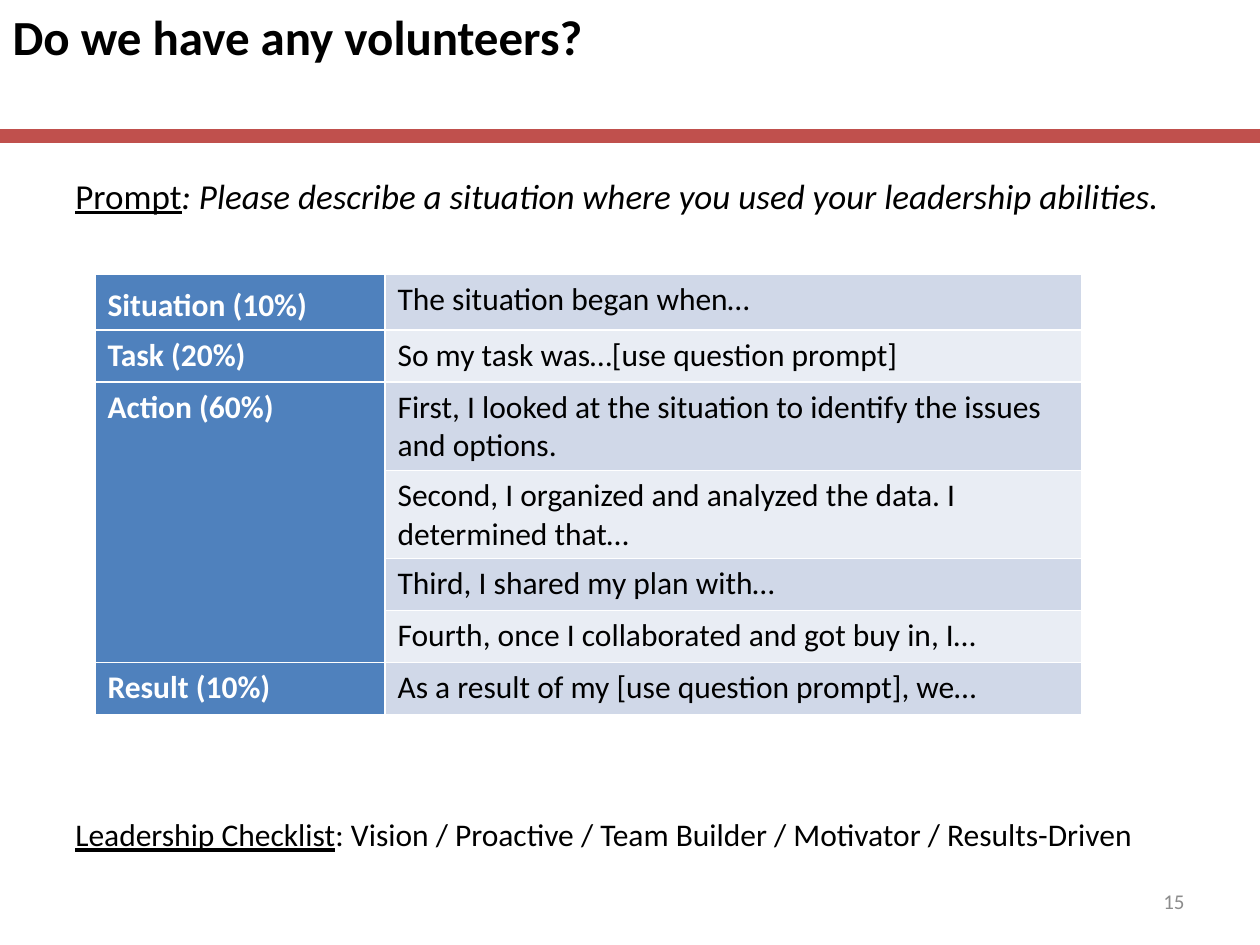
from typing import NamedTuple

from lxml import etree
from pptx import Presentation, util as u
from pptx.dml.color import RGBColor
from pptx.enum import shapes, text
from pptx.oxml import parse_xml
from pptx.oxml.ns import nsdecls, qn

SCALE = 914400 / 126
FONT = "Calibri"
HEX = {
    "black": "000000",
    "white": "FFFFFF",
    "grey": "8C8C8C",
    "rule": "C0504D",
    "head": "4F81BD",
    "odd": "D0D8E8",
    "even": "E9EDF4",
}


class Box(NamedTuple):
    left: int
    top: int
    width: int
    height: int


class Step(NamedTuple):
    name: str
    lines: list[str]


STEPS = [
    Step("Situation (10%)", ["The situation began when…"]),
    Step("Task (20%)", ["So my task was…[use question prompt]"]),
    Step("Action (60%)", [
        "First, I looked at the situation to identify the issues and options.",
        "Second, I organized and analyzed the data. I determined that…",
        "Third, I shared my plan with…",
        "Fourth, once I collaborated and got buy in, I…",
    ]),
    Step("Result (10%)", ["As a result of my [use question prompt], we…"]),
]


def px(n: int) -> u.Emu:
    return u.Emu(round(n * SCALE))


def tint(name: str) -> RGBColor:
    return RGBColor.from_string(HEX[name])


def write(para, words: str, *, size: int = 18, color: str = "black",
          bold: bool = False, italic: bool = False, under: bool = False):
    run = para.add_run()
    run.text = words
    font = run.font
    font.name, font.size = FONT, u.Pt(size)
    font.bold, font.italic, font.underline = bold, italic, under
    font.color.rgb = tint(color)


def label(slide, box: Box):
    frame = slide.shapes.add_textbox(*map(px, box)).text_frame
    frame.word_wrap = True
    return frame


def edge(cell):
    props = cell._tc.get_or_add_tcPr()
    for i, side in enumerate("LRTB"):
        props.insert(i, parse_xml(
            f'<a:ln{side} {nsdecls("a")} w="12700"><a:solidFill>'
            f'<a:srgbClr val="{HEX["white"]}"/></a:solidFill></a:ln{side}>'))


def paint(cell, color: str):
    cell.fill.solid()
    cell.fill.fore_color.rgb = tint(color)
    edge(cell)


def draw_title(slide, words: str, box: Box):
    title = slide.shapes.title
    title.left, title.top, title.width, title.height = map(px, box)
    frame = title.text_frame
    frame.auto_size = text.MSO_AUTO_SIZE.NONE
    frame.vertical_anchor = text.MSO_ANCHOR.TOP
    para = frame.paragraphs[0]
    para.alignment = text.PP_ALIGN.LEFT
    write(para, words, size=28, bold=True)


def draw_rule(slide, y: int, width: int):
    rule = slide.shapes.add_connector(
        shapes.MSO_CONNECTOR.STRAIGHT, 0, px(y), px(width), px(y))
    rule.line.color.rgb = tint("rule")
    rule.line.width = u.Pt(7.5)
    etree.SubElement(rule._element.spPr, qn("a:effectLst"))


def draw_steps(slide, steps: list[Step], box: Box, first: int):
    count = sum(len(step.lines) for step in steps)
    table = slide.shapes.add_table(count, 2, *map(px, box)).table
    table.first_row = table.horz_banding = False
    table.columns[0].width = px(first)
    table.columns[1].width = px(box.width - first)
    for row in table.rows:
        row.height = px(52)
    top = 0
    for step in steps:
        for i, line in enumerate(step.lines, top):
            paint(table.cell(i, 0), "head")
            paint(table.cell(i, 1), "even" if i % 2 else "odd")
            write(table.cell(i, 1).text_frame.paragraphs[0], line)
        head = table.cell(top, 0)
        if len(step.lines) > 1:
            head.merge(table.cell(i, 0))
        write(head.text_frame.paragraphs[0], step.name, color="white", bold=True)
        top = i + 1
    para = table.cell(0, 0).text_frame.paragraphs[0]
    para.line_spacing = 1.15
    para.space_before = para.space_after = u.Pt(2)


def main():
    deck = Presentation()
    deck.slide_width, deck.slide_height = px(1260), px(945)
    slide = deck.slides.add_slide(deck.slide_layouts[5])

    draw_rule(slide, 136, 1260)
    draw_title(slide, "Do we have any volunteers?", Box(0, 0, 1057, 126))

    page = label(slide, Box(903, 876, 294, 50))
    page.vertical_anchor = text.MSO_ANCHOR.MIDDLE
    page.paragraphs[0].alignment = text.PP_ALIGN.RIGHT
    write(page.paragraphs[0], "15", size=12, color="grey")

    check = label(slide, Box(63, 809, 1144, 50)).paragraphs[0]
    write(check, "Leadership Checklist", under=True)
    write(check, ": Vision / Proactive / Team Builder / Motivator / Results-Driven")

    draw_steps(slide, STEPS, Box(95, 274, 987, 364), 290)

    prompt = label(slide, Box(63, 168, 1134, 63)).paragraphs[0]
    write(prompt, "Prompt", size=20, under=True)
    write(prompt, ": Please describe a situation where you used your leadership abilities.",
          size=20, italic=True)

    deck.save("out.pptx")


if __name__ == "__main__":
    main()
